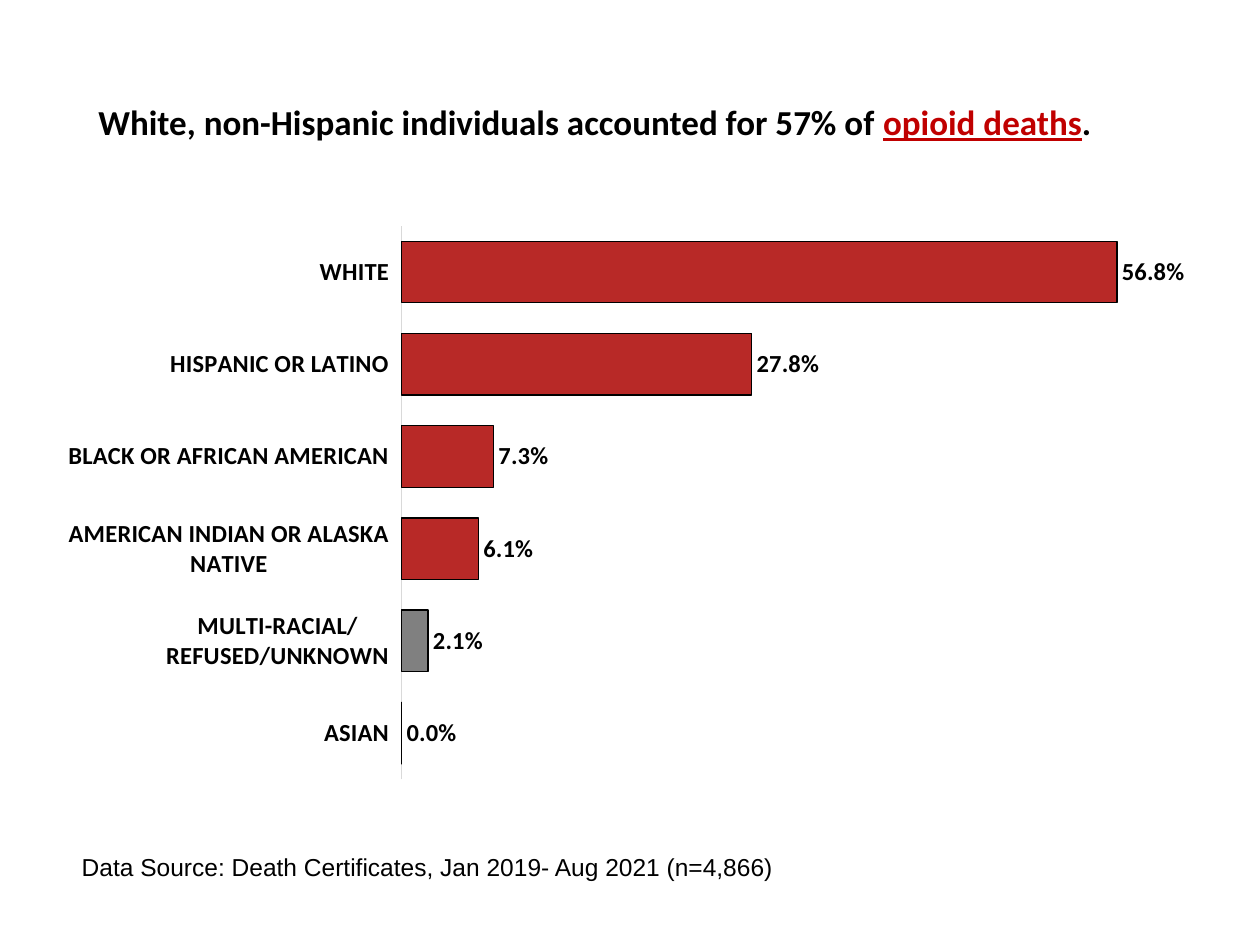
from lxml.etree import SubElement
from pptx import Presentation
from pptx.chart.data import CategoryChartData
from pptx.dml.color import RGBColor
from pptx.enum.chart import XL_CHART_TYPE as ChartType
from pptx.enum.chart import XL_LABEL_POSITION as LabelPosition
from pptx.enum.chart import XL_TICK_LABEL_POSITION as TickLabels
from pptx.enum.chart import XL_TICK_MARK as TickMark
from pptx.enum.text import MSO_ANCHOR, MSO_AUTO_SIZE, PP_ALIGN
from pptx.oxml.ns import qn
from pptx.util import Inches, Pt

BLACK = RGBColor(0x00, 0x00, 0x00)
ACCENT = RGBColor(0xC0, 0x00, 0x00)
BAR_RED = RGBColor(0xB8, 0x29, 0x27)
BAR_GRAY = RGBColor(0x80, 0x80, 0x80)
AXIS_GRAY = RGBColor(0xD9, 0xD9, 0xD9)

deck = Presentation()
deck.slide_width, deck.slide_height = Inches(10), Inches(7.5)
page = deck.slides.add_slide(deck.slide_layouts[5])


def style_font(font, color=BLACK, **values):
    for name, value in values.items():
        setattr(font, name, value)
    font.color.rgb = color


def fill_box(box, place, spans, **values):
    for name, value in zip(("left", "top", "width", "height"), place):
        setattr(box, name, Inches(value))
    frame = box.text_frame
    frame.word_wrap = True
    frame.auto_size = MSO_AUTO_SIZE.SHAPE_TO_FIT_TEXT
    frame.vertical_anchor = MSO_ANCHOR.TOP
    para = frame.paragraphs[0]
    para.alignment = PP_ALIGN.LEFT
    for text, color, underline in spans:
        span = para.add_run()
        span.text = text
        style_font(span.font, color, underline=underline, **values)


# Title
fill_box(page.shapes.title, (0.68, 0.75, 9.03, 0.44), [
    ("White, non-Hispanic individuals accounted for 57% of ", BLACK, False),
    ("opioid deaths", ACCENT, True),
    (".", BLACK, False),
], name="Calibri", size=Pt(20), bold=True)

# Share of deaths by race and ethnicity, listed from bottom to top
shares = {
    "ASIAN": 0,
    "MULTI-RACIAL/REFUSED/UNKNOWN": 0.021,
    "AMERICAN INDIAN OR ALASKA NATIVE": 0.061,
    "BLACK OR AFRICAN AMERICAN": 0.073,
    "HISPANIC OR LATINO": 0.278,
    "WHITE": 0.568,
}
data = CategoryChartData(number_format="0.0%")
data.categories = list(shares)
data.add_series("Series 1", list(shares.values()))
chart = page.shapes.add_chart(
    ChartType.BAR_CLUSTERED, Inches(0.36), Inches(1.53),
    Inches(9.27), Inches(4.87), data).chart
chart.has_legend = chart.has_title = False
style_font(chart.font, name="Calibri", size=Pt(10))
label_style = {"name": "Calibri", "size": Pt(14), "bold": True}

# Axes
groups = chart.category_axis
groups.major_tick_mark = groups.minor_tick_mark = TickMark.NONE
groups.tick_label_position = TickLabels.LOW
groups.has_major_gridlines = False
groups.format.line.color.rgb = AXIS_GRAY
groups.format.line.width = Pt(0.75)
style_font(groups.tick_labels.font, **label_style)
scale = chart.value_axis
for name, value in {"minimum_scale": 0, "maximum_scale": 0.6,
                    "has_major_gridlines": False, "visible": False}.items():
    setattr(scale, name, value)

# Bars and their labels
plot = chart.plots[0]
plot.gap_width = 50
plot.vary_by_categories = False
bars = plot.series[0]
bars.invert_if_negative = False
unknown = bars.points[list(shares).index("MULTI-RACIAL/REFUSED/UNKNOWN")]
for item, color in ((bars, BAR_RED), (unknown, BAR_GRAY)):
    item.format.fill.solid()
    item.format.fill.fore_color.rgb = color
    item.format.line.color.rgb = BLACK
    item.format.line.width = Pt(0.75)
labels = bars.data_labels
for name, value in {"show_value": True, "number_format": "0.0%",
                    "number_format_is_linked": False,
                    "position": LabelPosition.OUTSIDE_END}.items():
    setattr(labels, name, value)
style_font(labels.font, **label_style)

# Inner plot area as shares of the chart
area = chart.plots[0]._element.getparent()
layout = area.find(qn("c:layout"))
if layout is None:
    layout = SubElement(area, qn("c:layout"))
    area.insert(0, layout)
manual = SubElement(layout, qn("c:manualLayout"))
for tag, value in (("layoutTarget", "inner"), ("xMode", "edge"), ("yMode", "edge"),
                   ("x", 0.305), ("y", 0.054), ("w", 0.647), ("h", 0.902)):
    SubElement(manual, qn(f"c:{tag}")).set("val", str(value))

# Data source
source = page.shapes.add_textbox(0, 0, 0, 0)
fill_box(source, (0.55, 6.71, 7.46, 0.34), [
    ("Data Source: Death Certificates, Jan 2019- Aug 2021 (n=4,866)", BLACK, False),
], name="Arial", size=Pt(14))

deck.save("out.pptx")
